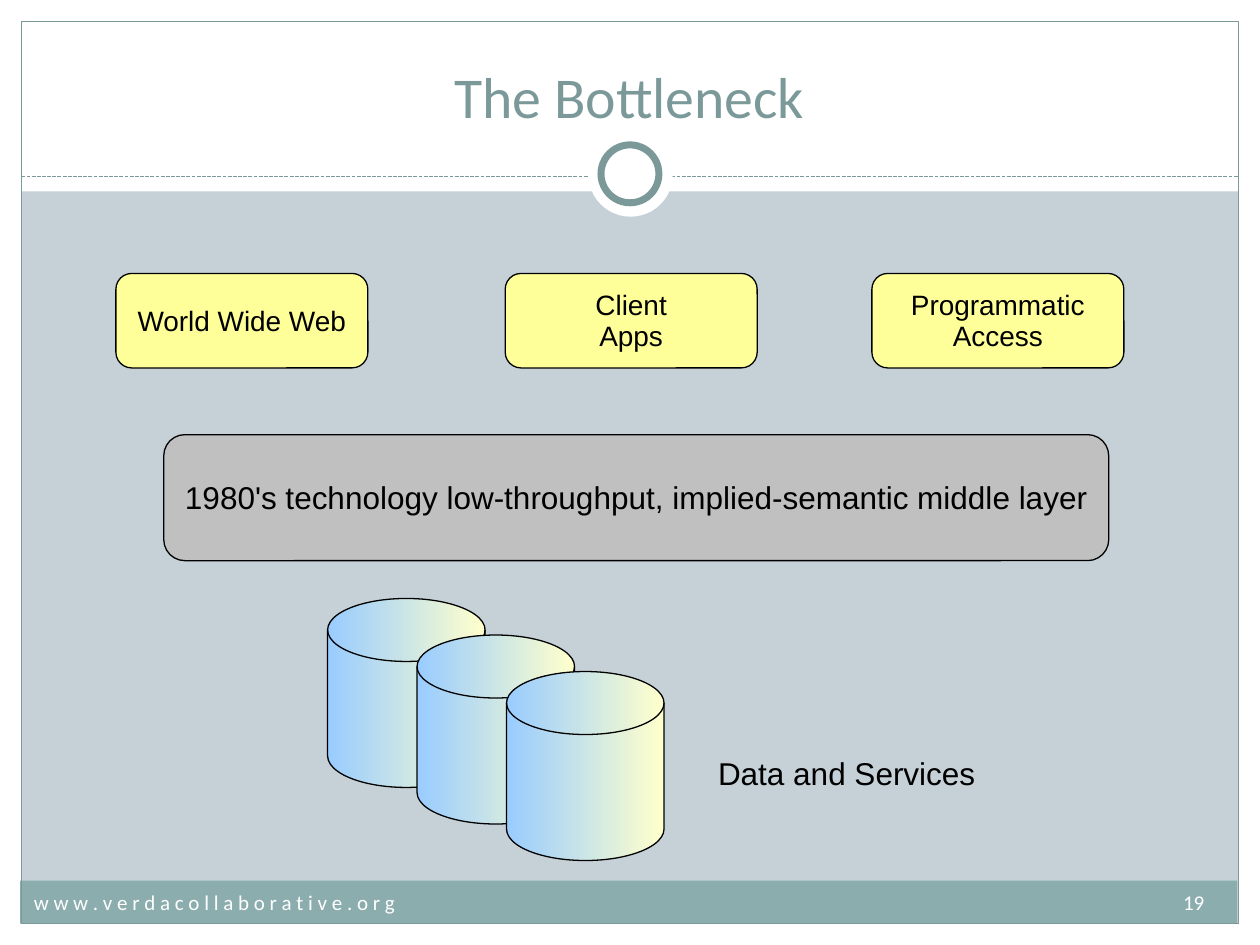
from lxml import etree
from pptx import Presentation
from pptx.dml.color import RGBColor
from pptx.enum.dml import MSO_LINE
from pptx.enum.shapes import MSO_CONNECTOR, MSO_SHAPE
from pptx.enum.text import MSO_ANCHOR, PP_ALIGN
from pptx.oxml.ns import qn
from pptx.util import Inches, Pt

RECT, OVAL = MSO_SHAPE.RECTANGLE, MSO_SHAPE.OVAL
ROUNDED, DISK = MSO_SHAPE.ROUNDED_RECTANGLE, MSO_SHAPE.FLOWCHART_MAGNETIC_DISK
STRAIGHT, DASH = MSO_CONNECTOR.STRAIGHT, MSO_LINE.SQUARE_DOT
LEFT, CENTER = PP_ALIGN.LEFT, PP_ALIGN.CENTER
TOP, MIDDLE, BOTTOM = MSO_ANCHOR.TOP, MSO_ANCHOR.MIDDLE, MSO_ANCHOR.BOTTOM

WHITE = RGBColor(0xFF, 0xFF, 0xFF)
BLACK = RGBColor(0, 0, 0)
BACKDROP = RGBColor(0xC5, 0xD1, 0xD7)
TEAL = RGBColor(0x7C, 0x99, 0x9A)
FOOTER_TEAL = RGBColor(0x8C, 0xAD, 0xAE)
YELLOW = RGBColor(0xFF, 0xFF, 0x99)
GRAY = RGBColor(0xC0, 0xC0, 0xC0)
CREAM = RGBColor(0xFF, 0xFF, 0xCC)
SKY = RGBColor(0x99, 0xCC, 0xFF)

TITLE_FORMAT = {"name": "Calibri", "size": Pt(33)}
FOOTER_FORMAT = {"name": "Calibri", "size": Pt(12)}
CLIENT_FORMAT = {"name": "Arial", "size": Pt(16)}
LAYER_FORMAT = {"name": "Arial", "size": Pt(18)}
DIAGRAM_FRAME = {"margin_top": Inches(0.07), "word_wrap": False}


def add_box(slide, kind, box, fill=None, line=None, width=0.75):
    shape = slide.shapes.add_shape(kind, *map(Inches, box))
    shape.shadow.inherit = False
    if fill is None:
        shape.fill.background()
    else:
        shape.fill.solid()
        shape.fill.fore_color.rgb = fill
    if line is None:
        shape.line.fill.background()
    else:
        shape.line.color.rgb = line
        shape.line.width = Pt(width)
    return shape


def write(shape, lines, font, color, frame, align=LEFT, spacing=1.0):
    text_frame = shape.text_frame
    for name, value in frame.items():
        setattr(text_frame, name, value)
    for index, line in enumerate(lines):
        paragraph = text_frame.add_paragraph() if index else text_frame.paragraphs[0]
        paragraph.alignment = align
        paragraph.line_spacing = spacing
        run = paragraph.add_run()
        run.text = line
        for name, value in font.items():
            setattr(run.font, name, value)
        run.font.color.rgb = color


def add_label(slide, box, lines, font, color, frame, **paragraph_format):
    label = slide.shapes.add_textbox(*map(Inches, box))
    write(label, lines, font, color, frame, **paragraph_format)
    return label


def add_block(slide, box, fill, lines, font):
    block = add_box(slide, ROUNDED, box, fill, BLACK)
    block.adjustments[0] = 0.167
    write(block, lines, font, BLACK, {**DIAGRAM_FRAME, "vertical_anchor": MIDDLE},
          align=CENTER, spacing=0.93)


def add_database(slide, left, top):
    disk = add_box(slide, DISK, (left, top, 1.25, 1.5), line=BLACK)
    disk.fill.gradient()
    disk.fill.gradient_angle = 180
    for stop, color in zip(disk.fill.gradient_stops, (CREAM, SKY)):
        stop.color.rgb = color


def add_divider(slide, left, right, y):
    divider = slide.shapes.add_connector(
        STRAIGHT, Inches(left), Inches(y), Inches(right), Inches(y))
    divider.line.color.rgb = TEAL
    divider.line.width = Pt(0.75)
    divider.line.dash_style = DASH
    etree.SubElement(divider._element.spPr, qn("a:effectLst"))


def add_right_tab(paragraph, position):
    tabs = etree.SubElement(paragraph._p.get_or_add_pPr(), qn("a:tabLst"))
    etree.SubElement(tabs, qn("a:tab"), pos=str(Inches(position)), algn="r")


def add_frame(slide):
    # White margins, footer band and outline
    for margin in ((0, 7.33, 10, 0.17), (0, 0, 10, 1.52),
                   (0, 0, 0.17, 7.5), (9.83, 0, 0.17, 7.5)):
        add_box(slide, RECT, margin, WHITE)
    add_box(slide, RECT, (0.16, 6.99, 9.66, 0.34), FOOTER_TEAL)
    add_box(slide, RECT, (0.17, 0.17, 9.66, 7.16), line=TEAL)

    # Dashed divider with ring
    add_divider(slide, 0.17, 9.83, 1.4)
    add_box(slide, OVAL, (4.67, 1.05, 0.67, 0.67), WHITE)
    add_box(slide, OVAL, (4.77, 1.15, 0.46, 0.46), WHITE, TEAL, 4)


def main():
    prs = Presentation()
    prs.slide_width, prs.slide_height = Inches(10), Inches(7.5)
    slide = prs.slides.add_slide(prs.slide_layouts[6])
    slide.background.fill.solid()
    slide.background.fill.fore_color.rgb = BACKDROP
    add_frame(slide)

    # Title and footer
    add_label(slide, (0.33, 0.25, 9.33, 0.83), ["The Bottleneck"], TITLE_FORMAT, TEAL,
              {"word_wrap": True, "vertical_anchor": BOTTOM}, align=CENTER)
    footer = add_label(
        slide, (0.17, 7.01, 9.65, 0.4),
        ["w w w . v e r d a c o l l a b o r a t i v e . o r g\t19"],
        FOOTER_FORMAT, WHITE, {"word_wrap": False, "vertical_anchor": TOP})
    add_right_tab(footer.text_frame.paragraphs[0], 9.29)

    # Ways in
    for left, lines in ((0.92, ["World Wide Web"]),
                        (4.01, ["Client", "Apps"]),
                        (6.92, ["Programmatic", "Access"])):
        add_block(slide, (left, 2.17, 2, 0.75), YELLOW, lines, CLIENT_FORMAT)

    # Middle layer
    add_block(slide, (1.3, 3.45, 7.5, 1), GRAY,
              ["1980's technology low-throughput, implied-semantic middle layer"],
              LAYER_FORMAT)

    # Data stores, each overlapping the one before
    for step in range(3):
        add_database(slide, 2.6 + 0.71 * step, 4.75 + 0.29 * step)
    add_label(slide, (5.6, 5.94, 2.32, 0.49), ["Data and Services"], LAYER_FORMAT,
              BLACK, DIAGRAM_FRAME, spacing=0.93)

    prs.save("out.pptx")


if __name__ == "__main__":
    main()
